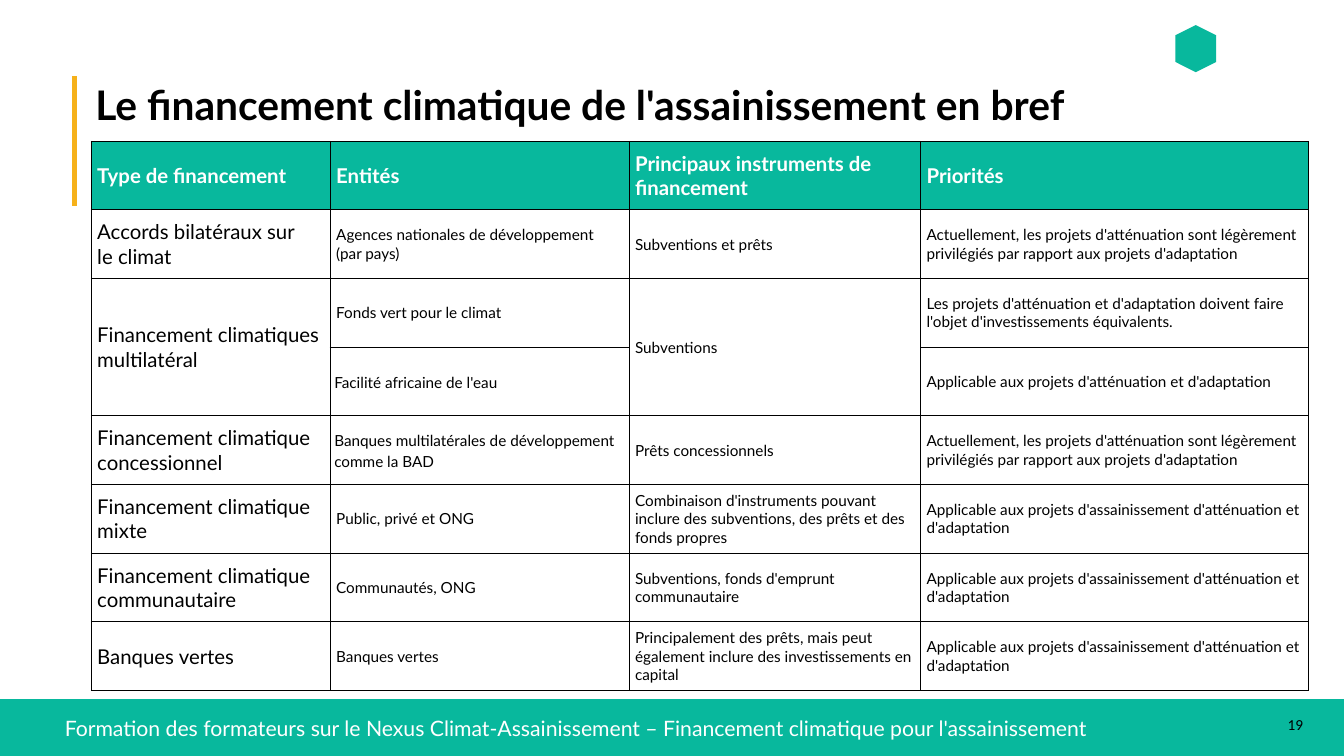
"""Build the slide that sums up climate finance for sanitation."""
from dataclasses import dataclass

from lxml.etree import SubElement
from pptx import Presentation
from pptx.dml.color import RGBColor
from pptx.enum.shapes import MSO_CONNECTOR, MSO_SHAPE
from pptx.enum.text import MSO_ANCHOR, MSO_AUTO_SIZE, PP_ALIGN
from pptx.oxml.ns import qn
from pptx.util import Inches, Pt


@dataclass(frozen=True)
class Theme:
    teal: RGBColor = RGBColor(0x08, 0xB8, 0x9D)
    amber: RGBColor = RGBColor(0xF6, 0xB1, 0x1A)
    black: RGBColor = RGBColor(0, 0, 0)
    white: RGBColor = RGBColor(0xFF, 0xFF, 0xFF)
    face: str = "Lato"
    number_face: str = "Calibri"
    title: int = 48
    footer: int = 25
    label: int = 24
    detail: int = 18


theme = Theme()
deck = Presentation()
deck.slide_width, deck.slide_height = Inches(21.99), Inches(12.37)


def place(left, top, width, height):
    """Turn percentages of the slide into lengths."""
    across, down = deck.slide_width / 100, deck.slide_height / 100
    return [int(left * across), int(top * down), int(width * across), int(height * down)]


def write(frame, text, size, color, bold=False, face=theme.face, align=PP_ALIGN.LEFT):
    """Write one paragraph, with a line break at each newline."""
    frame.word_wrap = True
    paragraph = frame.paragraphs[0]
    paragraph.alignment = align
    for index, line in enumerate(text.split("\n")):
        if index:
            paragraph.add_line_break()
        run = paragraph.add_run()
        run.text = line
        run.font.size, run.font.bold, run.font.name = Pt(size), bold, face
        run.font.color.rgb = color
    return paragraph


slide = deck.slides.add_slide(deck.slide_layouts[5])
shapes = slide.shapes

footer_band = shapes.add_shape(MSO_SHAPE.RECTANGLE, *place(0, 92.48, 100, 7.52))
emblem = shapes.add_shape(MSO_SHAPE.HEXAGON, *place(87.22, 3.72, 3.5, 5.42))
emblem.rotation = 90
for block in (footer_band, emblem):
    block.shadow.inherit = False
    block.fill.solid()
    block.fill.fore_color.rgb = theme.teal
    block.line.fill.background()

start_x, start_y, end_x, end_y = place(5.55, 10.11, 5.55, 27.24)
title_rule = shapes.add_connector(MSO_CONNECTOR.STRAIGHT, start_x, start_y, end_x, end_y)
title_rule.line.color.rgb = theme.amber
title_rule.line.width = Pt(4.95)
SubElement(title_rule._element.spPr, qn("a:effectLst"))

title = shapes.title
title.left, title.top, title.width, title.height = place(6.64, 10.11, 86.72, 7.36)
title.text_frame.vertical_anchor = MSO_ANCHOR.TOP
title.text_frame.auto_size = MSO_AUTO_SIZE.NONE
write(title.text_frame, "Le financement climatique de l'assainissement en bref",
      theme.title, theme.black, bold=True)

favours_mitigation = ("Actuellement, les projets d'atténuation sont légèrement privilégiés "
                      "par rapport aux projets d'adaptation")
sanitation_projects = "Applicable aux projets d'assainissement d'atténuation et d'adaptation"
finance_rows = [
    ("Type de financement", "Entités", "Principaux instruments de financement", "Priorités"),
    ("Accords bilatéraux sur\nle climat", "Agences nationales de développement (par pays)",
     "Subventions et prêts", favours_mitigation),
    ("Financement climatiques multilatéral", "Fonds vert pour le climat", "Subventions",
     "Les projets d'atténuation et d'adaptation doivent faire l'objet "
     "d'investissements équivalents."),
    ("", "Facilité africaine de l'eau", "",
     "Applicable aux projets d'atténuation et d'adaptation"),
    ("Financement climatique concessionnel",
     "Banques multilatérales de développement comme la BAD",
     "Prêts concessionnels", favours_mitigation),
    ("Financement climatique mixte", "Public, privé et ONG",
     "Combinaison d'instruments pouvant inclure des subventions, des prêts et des fonds propres",
     sanitation_projects),
    ("Financement climatique communautaire", "Communautés, ONG",
     "Subventions, fonds d'emprunt communautaire", sanitation_projects),
    ("Banques vertes", "Banques vertes",
     "Principalement des prêts, mais peut également inclure des investissements en capital",
     sanitation_projects),
]
column_shares = (17.78, 22.24, 21.69, 28.88)
spaced_cells = {(3, 1), (4, 1)}

overview = shapes.add_table(len(finance_rows), len(column_shares),
                            *place(6.78, 18.67, sum(column_shares), 72.68)).table
overview.first_row = overview.horz_banding = False
for column, share in zip(overview.columns, column_shares):
    column.width = int(deck.slide_width * share / 100)
for merged_column in (0, 2):
    overview.cell(2, merged_column).merge(overview.cell(3, merged_column))

for row, texts in enumerate(finance_rows):
    for col, text in enumerate(texts):
        cell = overview.cell(row, col)
        if cell.is_spanned:
            continue
        header = row == 0
        cell.vertical_anchor = MSO_ANCHOR.MIDDLE
        for side in ("a:lnL", "a:lnR", "a:lnT", "a:lnB"):
            border = SubElement(cell._tc.get_or_add_tcPr(), qn(side), w=str(Pt(1)))
            ink = SubElement(border, qn("a:solidFill"))
            SubElement(ink, qn("a:srgbClr"), val=str(theme.black))
        cell.fill.solid()
        cell.fill.fore_color.rgb = theme.teal if header else theme.white
        paragraph = write(cell.text_frame, text,
                          theme.label if header or col == 0 else theme.detail,
                          theme.white if header else theme.black, bold=header)
        if (row, col) in spaced_cells:
            cell.margin_left = cell.margin_right = Inches(0.07)
            cell.margin_top = cell.margin_bottom = 0
            paragraph.line_spacing = 1.15
            paragraph.space_after = Pt(6)

course = shapes.add_textbox(*place(4.37, 94.26, 91.36, 4.2))
write(course.text_frame, "Formation des formateurs sur le Nexus Climat-Assainissement – "
      "Financement climatique pour l'assainissement", theme.footer, theme.white)

page_number = shapes.add_textbox(*place(74.4, 94.18, 23.01, 2.43))
write(page_number.text_frame, "19", theme.detail, theme.black,
      face=theme.number_face, align=PP_ALIGN.RIGHT)

deck.save("out.pptx")
